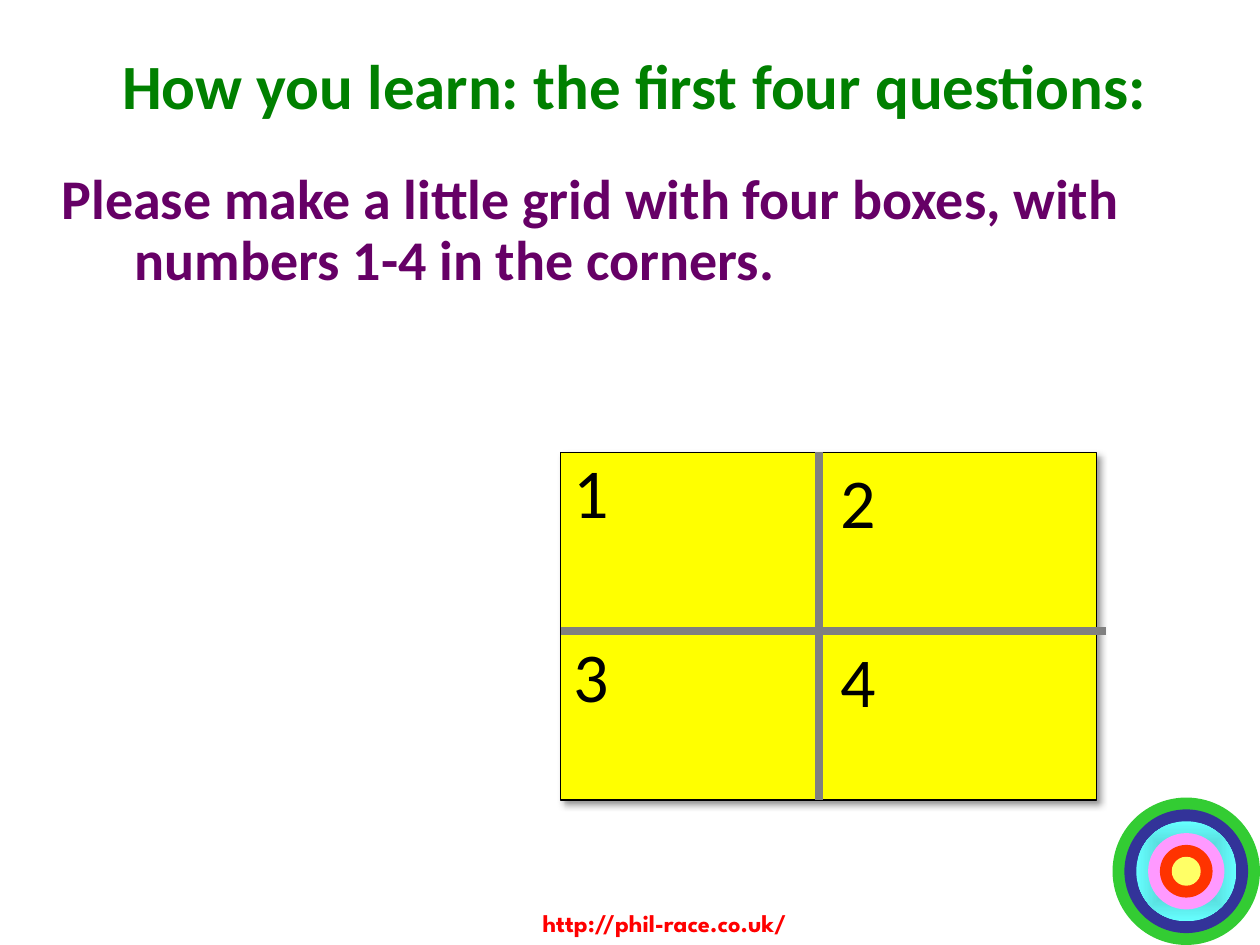
from dataclasses import dataclass

import lxml.etree
import pptx
import pptx.dml.color
import pptx.enum.shapes
import pptx.enum.text
import pptx.oxml.ns
import pptx.util

# The slide is a grid of 100 columns by 75 rows; lengths below count its cells.
CELL = pptx.util.Inches(0.1)
COLUMNS, ROWS = 100, 75

COLOURS = {
    "title": "008000", "instruction": "660066", "address": "FF0000",
    "number": "000000", "box": "FFFF00", "outline": "000000",
    "divider": "808080",
    "green": "33CC33", "blue": "333399", "teal": "47B2B2", "cyan": "66FFFF",
    "pink": "FF99FF", "red": "FF3300", "yellow": "FFFF66",
}
ALIGN = pptx.enum.text.PP_ALIGN
ANCHOR = pptx.enum.text.MSO_ANCHOR


@dataclass
class Area:
    left: float
    top: float
    width: float
    height: float

    def emu(self) -> list[int]:
        return [cells(n) for n in (self.left, self.top, self.width, self.height)]


@dataclass
class Label:
    text: str
    area: Area
    size: int
    colour: str
    font: str = "Calibri"
    bold: bool = True
    align: ALIGN = ALIGN.LEFT
    anchor: ANCHOR = ANCHOR.TOP
    line_spacing: float = 1.0
    hanging: float = 0
    wrap: bool = True


def cells(count: float) -> int:
    return round(count * CELL)


def rgb(name: str) -> pptx.dml.color.RGBColor:
    return pptx.dml.color.RGBColor.from_string(COLOURS[name])


def add_node(parent, tag: str, **attributes: str):
    node = lxml.etree.SubElement(parent, pptx.oxml.ns.qn(tag))
    for key, value in attributes.items():
        node.set(key, value)
    return node


def draw_label(slide, label: Label) -> None:
    frame = slide.shapes.add_textbox(*label.area.emu()).text_frame
    frame.word_wrap = label.wrap
    frame.vertical_anchor = label.anchor
    frame.text = label.text
    paragraph = frame.paragraphs[0]
    paragraph.alignment = label.align
    paragraph.line_spacing = label.line_spacing
    if label.hanging:
        properties = paragraph._p.get_or_add_pPr()
        properties.set("marL", str(cells(label.hanging)))
        properties.set("indent", str(-cells(label.hanging)))
    font = paragraph.runs[0].font
    font.name, font.size, font.bold = label.font, pptx.util.Pt(label.size), label.bold
    font.color.rgb = rgb(label.colour)


def draw_shape(slide, kind, area: Area, colour: str):
    shape = slide.shapes.add_shape(kind, *area.emu())
    shape.shadow.inherit = False
    shape.fill.solid()
    shape.fill.fore_color.rgb = rgb(colour)
    shape.line.fill.background()
    return shape


def shade_from_centre(shape, inner: str, outer: str) -> None:
    shape.fill.gradient()
    for stop, colour in zip(shape.fill.gradient_stops, (inner, outer)):
        stop.color.rgb = rgb(colour)
    gradient = shape._element.spPr.find(pptx.oxml.ns.qn("a:gradFill"))
    gradient.remove(gradient.find(pptx.oxml.ns.qn("a:lin")))
    shading = add_node(gradient, "a:path", path="shape")
    add_node(shading, "a:fillToRect", l="50000", t="50000", r="50000", b="50000")


def cast_shadow(shape) -> None:
    effects = shape._element.spPr.find(pptx.oxml.ns.qn("a:effectLst"))
    shadow = add_node(effects, "a:outerShdw", blurRad=str(pptx.util.Pt(4)),
                      dist=str(pptx.util.Pt(3)), dir=str(45 * 60000),
                      algn="tl", rotWithShape="0")
    add_node(add_node(shadow, "a:srgbClr", val="000000"), "a:alpha", val="40000")


def draw_divider(slide, x1: float, y1: float, x2: float, y2: float) -> None:
    divider = slide.shapes.add_connector(
        pptx.enum.shapes.MSO_CONNECTOR.STRAIGHT, *map(cells, (x1, y1, x2, y2)))
    divider.line.color.rgb = rgb("divider")
    divider.line.width = pptx.util.Pt(4.5)
    add_node(divider._element.spPr, "a:effectLst")


def draw_target(slide) -> None:
    left, top, diameter, band = 88.3, 63.3, 11.7, 0.94
    for ring, colour in enumerate(("green", "blue", "cyan", "pink", "red", "yellow")):
        inset = ring * band
        size = diameter - 2 * inset
        disc = draw_shape(slide, pptx.enum.shapes.MSO_SHAPE.OVAL,
                          Area(left + inset, top + inset, size, size), colour)
        if colour == "cyan":
            shade_from_centre(disc, "teal", "cyan")


def draw_question_grid(slide) -> None:
    box = Area(44.5, 35.9, 42.5, 27.6)
    middle_x, middle_y, overhang = 65, 50.1, 0.8
    panel = draw_shape(slide, pptx.enum.shapes.MSO_SHAPE.RECTANGLE, box, "box")
    panel.line.color.rgb = rgb("outline")
    panel.line.width = pptx.util.Pt(0.75)
    cast_shadow(panel)
    draw_divider(slide, middle_x, box.top, middle_x, box.top + box.height)
    draw_divider(slide, box.left, middle_y, box.left + box.width + overhang, middle_y)

    # Numbers in the corners; the left column sits slightly higher
    right = middle_x + 0.7
    corners = ((box.left, box.top - 0.8), (right, box.top),
               (box.left, middle_y - 0.4), (right, middle_y))
    for number, (x, y) in enumerate(corners, start=1):
        draw_label(slide, Label(str(number), Area(x, y, 4.8, 7.8), 40, "number",
                                bold=False, wrap=False))


def main() -> None:
    deck = pptx.Presentation()
    deck.slide_width, deck.slide_height = cells(COLUMNS), cells(ROWS)
    slide = deck.slides.add_slide(deck.slide_layouts[6])

    # Target emblem and web address at the foot
    draw_target(slide)
    draw_label(slide, Label("http://phil-race.co.uk/", Area(38.3, 71.6, 28.9, 3.4),
                            14, "address", font="League Spartan", align=ALIGN.CENTER))

    # Title and instruction
    draw_label(slide, Label("How you learn: the first four questions:",
                            Area(2.7, 2.1, 95.3, 10.2), 36, "title",
                            align=ALIGN.CENTER, anchor=ANCHOR.MIDDLE,
                            line_spacing=0.85))
    draw_label(slide, Label("Please make a little grid with four boxes, "
                            "with numbers 1-4 in the corners.",
                            Area(3.9, 13.1, 94.1, 51.1), 32, "instruction",
                            line_spacing=0.9, hanging=5.8))

    draw_question_grid(slide)
    deck.save("out.pptx")


if __name__ == "__main__":
    main()
